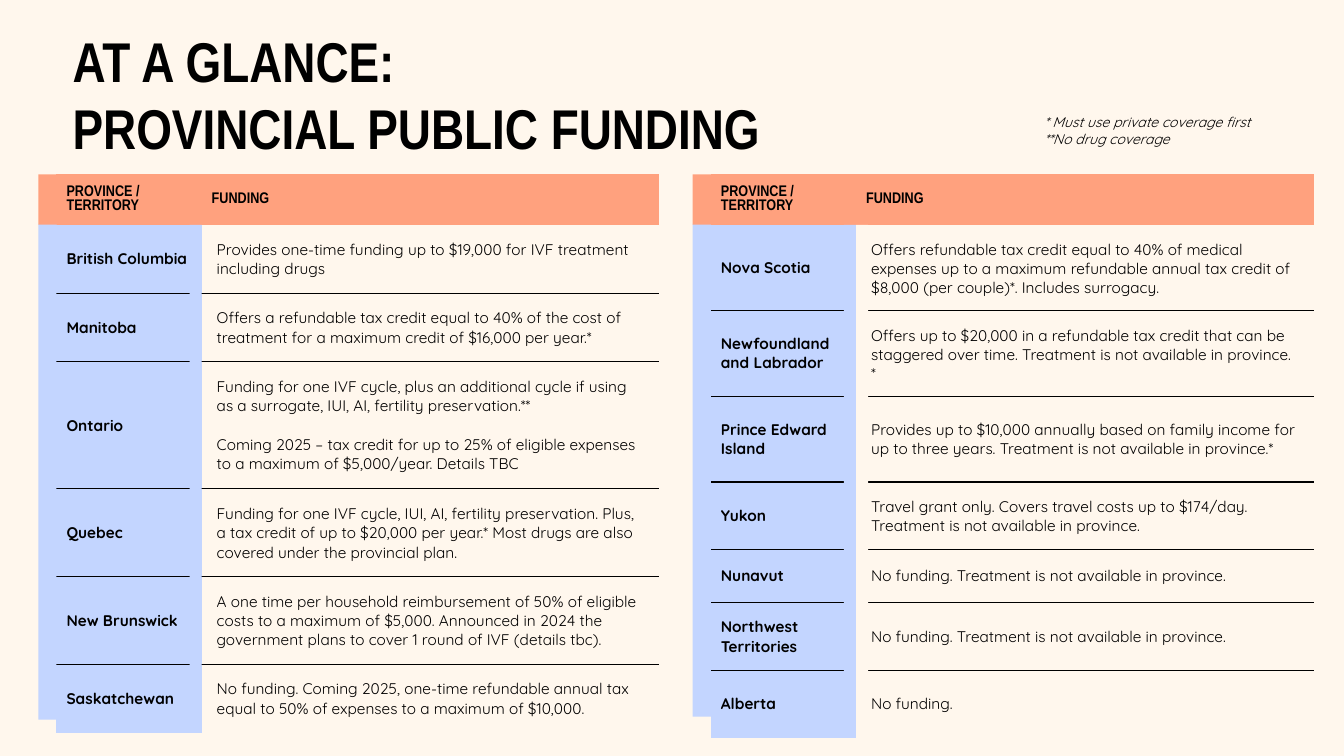
from pptx import Presentation
from pptx.dml.color import RGBColor
from pptx.enum.shapes import MSO_SHAPE as SHAPE
from pptx.enum.text import MSO_ANCHOR as ANCHOR, MSO_AUTO_SIZE as AUTO, PP_ALIGN as ALIGN
from pptx.oxml import parse_xml
from pptx.oxml.ns import nsdecls
from pptx.util import Inches, Pt

# Content
TITLE = ["AT A GLANCE:", "PROVINCIAL PUBLIC FUNDING"]
NOTES = ["* Must use private coverage first", "**No drug coverage"]
HEADER = ("PROVINCE / TERRITORY", ["FUNDING"], 0.5)

# Province, funding paragraphs, row height
WEST_ROWS = [
    ("British Columbia", ["Provides one-time funding up to $19,000 for IVF treatment including drugs"], 0.68),
    ("Manitoba", ["Offers a refundable tax credit equal to 40% of the cost of treatment for a "
                  "maximum credit of $16,000 per year.*"], 0.68),
    ("Ontario", ["Funding for one IVF cycle, plus an additional cycle if using as a surrogate, "
                 "IUI, AI, fertility preservation.**",
                 "Coming 2025 – tax credit for up to 25% of eligible expenses to a maximum of "
                 "$5,000/year. Details TBC"], 1.26),
    ("Quebec", ["Funding for one IVF cycle, IUI, AI, fertility preservation. Plus, a tax credit "
                "of up to $20,000 per year.* Most drugs are also covered under the provincial plan."], 0.87),
    ("New Brunswick", ["A one time per household reimbursement of 50% of eligible costs to a maximum "
                       "of $5,000. Announced in 2024 the government plans to cover 1 round of IVF "
                       "(details tbc)."], 0.87),
    ("Saskatchewan", ["No funding. Coming 2025, one-time refundable annual tax equal to 50% of "
                      "expenses to a maximum of $10,000."], 0.68),
]
EAST_ROWS = [
    ("Nova Scotia", ["Offers refundable tax credit equal to 40% of medical expenses up to a maximum "
                     "refundable annual tax credit of $8,000 (per couple)*. Includes surrogacy."], 0.85),
    ("Newfoundland and Labrador", ["Offers up to $20,000 in a refundable tax credit that can be staggered "
                                   "over time. Treatment is not available in province. *"], 0.85),
    ("Prince Edward Island", ["Provides up to $10,000 annually based on family income for up to three "
                              "years. Treatment is not available in province.*"], 0.85),
    ("Yukon", ["Travel grant only. Covers travel costs up to $174/day. Treatment is not "
               "available in province."], 0.67),
    ("Nunavut", ["No funding. Treatment is not available in province."], 0.53),
    ("Northwest Territories", ["No funding. Treatment is not available in province."], 0.67),
    ("Alberta", ["No funding."], 0.67),
]

# Format
CREAM = RGBColor(0xFF, 0xF7, 0xED)
CORAL = RGBColor(0xFF, 0xA1, 0x7E)
BLUE = RGBColor(0xC3, 0xD5, 0xFF)
BLACK = RGBColor(0, 0, 0)
HEAD_FONT = {"name": "Arial Narrow", "size": Pt(11), "bold": True}
NAME_FONT = {"name": "Quicksand", "size": Pt(11), "bold": True}
BODY_FONT = NAME_FONT | {"bold": False}
TITLE_FONT = HEAD_FONT | {"size": Pt(40)}
NOTE_FONT = {"name": "Quicksand", "size": Pt(10), "italic": True}
NO_STYLE = "{2D5ABB26-0587-4C30-8999-92F81FD0307C}"
TABLE_TOP, HEAD_H = 1.73, 0.5
COL_W = (1.44, 4.54)
EDGE_W, GAP_W, GAP_H = 0.18, 0.12, 4.69


def write(tf, lines, font, gap=0):
    tf.word_wrap = True
    for i, line in enumerate(lines):
        p = tf.paragraphs[0] if i == 0 else tf.add_paragraph()
        p.alignment = ALIGN.LEFT
        if i:
            p.space_before = Pt(gap)
        r = p.add_run()
        r.text = line
        r.font.color.rgb = BLACK
        for key, value in font.items():
            setattr(r.font, key, value)


def add_strip(x, y, w, h, color):
    sp = slide.shapes.add_shape(SHAPE.RECTANGLE, *map(Inches, (x, y, w, h)))
    sp.shadow.inherit = False
    sp.fill.solid()
    sp.fill.fore_color.rgb = color
    sp.line.fill.background()


def add_rule(cell, side):
    cell._tc.get_or_add_tcPr().append(parse_xml(
        f'<a:{side} {nsdecls("a")} w="12700"><a:solidFill><a:srgbClr val="{BLACK}"/>'
        f'</a:solidFill></a:{side}>'))


def add_funding_table(x, entries):
    rows = [HEADER] + entries
    last = len(rows) - 1
    frame = slide.shapes.add_table(
        len(rows), 2, Inches(x), Inches(TABLE_TOP), Inches(sum(COL_W)),
        Inches(sum(row[2] for row in rows)))
    table = frame.table
    table.first_row = table.horz_banding = False
    table._tbl.tblPr.find("{*}tableStyleId").text = NO_STYLE
    for col, width in zip(table.columns, COL_W):
        col.width = Inches(width)
    for i, (name, funding, height) in enumerate(rows):
        table.rows[i].height = Inches(height)
        for j, lines in enumerate(([name], funding)):
            cell = table.cell(i, j)
            cell.vertical_anchor = ANCHOR.MIDDLE
            # Rules separate the provinces only
            if i > 1:
                add_rule(cell, "lnT")
            if 0 < i < last:
                add_rule(cell, "lnB")
            if i == 0 or j == 0:
                cell.fill.solid()
                cell.fill.fore_color.rgb = BLUE if i else CORAL
            else:
                cell.fill.background()
                for side in ("left", "right", "top", "bottom"):
                    setattr(cell, f"margin_{side}", Inches(0.15))
            font = HEAD_FONT if i == 0 else (NAME_FONT, BODY_FONT)[j]
            write(cell.text_frame, lines, font, gap=13.75)


prs = Presentation()
prs.slide_width, prs.slide_height = Inches(13.33), Inches(7.5)
slide = prs.slides.add_slide(prs.slide_layouts[5])
slide.background.fill.solid()
slide.background.fill.fore_color.rgb = CREAM

# Title
title = slide.shapes.title
title.left, title.top, title.width, title.height = map(Inches, (0.62, 0.21, 7.25, 1.45))
title.text_frame.auto_size = AUTO.NONE
title.text_frame.vertical_anchor = ANCHOR.TOP
write(title.text_frame, TITLE, TITLE_FONT)

# Footnotes
notes = slide.shapes.add_textbox(*map(Inches, (10.26, 1.08, 3.03, 0.44)))
write(notes.text_frame, NOTES, NOTE_FONT)

# Tables, each with a left edge and strips that break the rules between columns
body_top = TABLE_TOP + HEAD_H
for x, entries, edge_h, gaps in (
        (0.56, WEST_ROWS, 4.92, [(-GAP_W, BLUE)]),
        (7.05, EAST_ROWS, 4.89, [(0, CREAM), (-GAP_W, BLUE)])):
    add_funding_table(x, entries)
    for offset, color in gaps:
        add_strip(x + COL_W[0] + offset, body_top, GAP_W, GAP_H, color)
    add_strip(x - EDGE_W, body_top - 0.01, EDGE_W, edge_h, BLUE)
    add_strip(x - EDGE_W, TABLE_TOP, EDGE_W, HEAD_H, CORAL)

prs.save("out.pptx")
